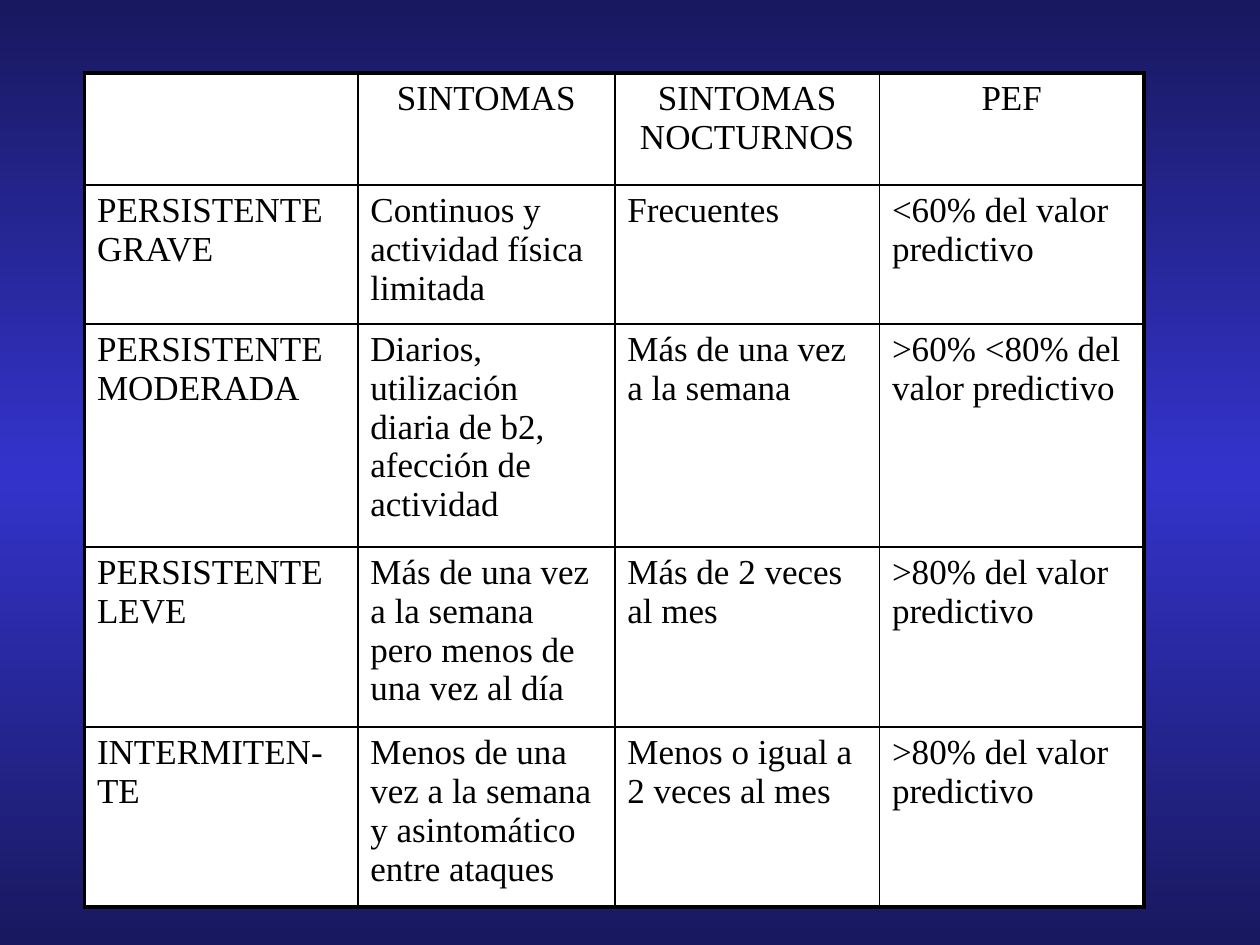
"""Build a slide with a table that classifies severity by symptoms and PEF."""
from copy import deepcopy

from lxml.etree import SubElement
from pptx import Presentation
from pptx.dml.color import RGBColor
from pptx.enum.text import PP_ALIGN
from pptx.oxml.ns import qn
from pptx.util import Inches, Pt

COLORS = {"edge": "18185E", "middle": "3333CC", "paper": "FFFFFF", "ink": "000000"}
BACKGROUND = [(0, "edge"), (0.5, "middle"), (1, "edge")]
FONT, FONT_SIZE = "Times New Roman", 20
OUTER_LINE, INNER_LINE = 2.25, 1
LEFT, TOP = 0.67, 0.58
COLUMN_WIDTHS = [2.17, 2.04, 2.1, 2.1]
ROW_HEIGHTS = [0.89, 1.1, 1.77, 1.43, 1.43]
SEVERITY = [
    ["", "SINTOMAS", "SINTOMAS NOCTURNOS", "PEF"],
    ["PERSISTENTE GRAVE", "Continuos y actividad física limitada",
     "Frecuentes", "<60% del valor predictivo"],
    ["PERSISTENTE MODERADA", "Diarios, utilización diaria de b2, afección de actividad",
     "Más de una vez a la semana", ">60% <80% del valor predictivo"],
    ["PERSISTENTE LEVE", "Más de una vez a la semana pero menos de una vez al día",
     "Más de 2 veces al mes", ">80% del valor predictivo"],
    ["INTERMITEN-TE", "Menos de una vez a la semana y asintomático entre ataques",
     "Menos o igual a 2 veces al mes", ">80% del valor predictivo"],
]


def rgb(name):
    return RGBColor.from_string(COLORS[name])


def paint_background(slide):
    fill = slide.background.fill
    fill.gradient()
    fill.gradient_angle = 270
    stop_list = slide.element.find(".//" + qn("a:gsLst"))
    stop_list.append(deepcopy(stop_list[0]))
    for stop, (position, color) in zip(fill.gradient_stops, BACKGROUND):
        stop.position = position
        stop.color.rgb = rgb(color)


def draw_borders(cell, outer_sides):
    properties = cell._tc.get_or_add_tcPr()
    for side, is_outer in outer_sides.items():
        width = Pt(OUTER_LINE if is_outer else INNER_LINE)
        line = SubElement(properties, qn(f"a:ln{side}"), w=str(width))
        SubElement(SubElement(line, qn("a:solidFill")), qn("a:srgbClr"), val=COLORS["ink"])


def fill_cell(cell, text, is_heading):
    cell.fill.solid()
    cell.fill.fore_color.rgb = rgb("paper")
    cell.text = text
    paragraph = cell.text_frame.paragraphs[0]
    paragraph.alignment = PP_ALIGN.CENTER if is_heading else PP_ALIGN.LEFT
    paragraph.font.name = FONT
    paragraph.font.size = Pt(FONT_SIZE)
    paragraph.font.bold = False
    paragraph.font.color.rgb = rgb("ink")


def add_severity_table(slide):
    row_count, column_count = len(ROW_HEIGHTS), len(COLUMN_WIDTHS)
    table = slide.shapes.add_table(
        row_count, column_count, Inches(LEFT), Inches(TOP),
        Inches(sum(COLUMN_WIDTHS)), Inches(sum(ROW_HEIGHTS))).table
    table.first_row = table.horz_banding = False
    for column, width in zip(table.columns, COLUMN_WIDTHS):
        column.width = Inches(width)
    for row, height in zip(table.rows, ROW_HEIGHTS):
        row.height = Inches(height)
    for r, texts in enumerate(SEVERITY):
        for c, text in enumerate(texts):
            cell = table.cell(r, c)
            draw_borders(cell, {"L": c == 0, "R": c == column_count - 1,
                                "T": r == 0, "B": r == row_count - 1})
            fill_cell(cell, text, is_heading=r == 0)


def main():
    deck = Presentation()
    deck.slide_width, deck.slide_height = Inches(10), Inches(7.5)
    slide = deck.slides.add_slide(deck.slide_layouts[6])
    paint_background(slide)
    add_severity_table(slide)
    deck.save("out.pptx")


if __name__ == "__main__":
    main()
